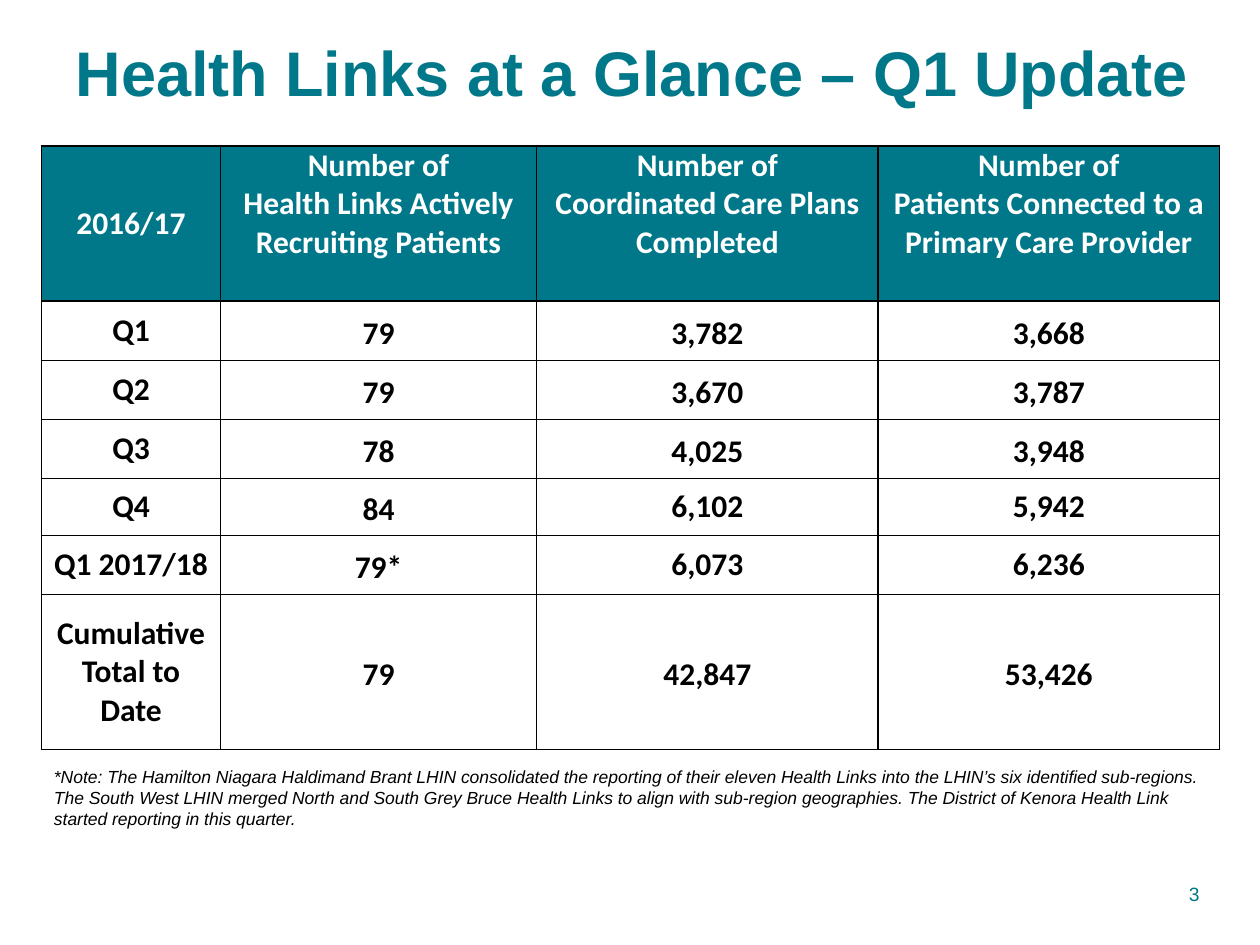
from lxml import etree
from pptx import Presentation
from pptx import util as u
from pptx.dml.color import RGBColor
from pptx.enum import text
from pptx.oxml.ns import qn

Inches, Pt = u.Inches, u.Pt
TEAL = RGBColor(0x00, 0x78, 0x8A)
WHITE = RGBColor(0xFF, 0xFF, 0xFF)
BLACK = RGBColor(0x00, 0x00, 0x00)


def set_font(p, name, size, color, bold=False, italic=False):
    f = p.font
    f.name, f.size, f.bold, f.italic = name, Pt(size), bold, italic
    f.color.rgb = color


def add_borders(cell):
    tcPr = cell._tc.get_or_add_tcPr()
    for i, side in enumerate(("lnL", "lnR", "lnT", "lnB")):
        ln = etree.Element(qn(f"a:{side}"), w=str(Pt(1)))
        fill = etree.SubElement(ln, qn("a:solidFill"))
        etree.SubElement(fill, qn("a:srgbClr"), val=str(BLACK))
        tcPr.insert(i, ln)


prs = Presentation()
prs.slide_width, prs.slide_height = Inches(10), Inches(7.5)
s = prs.slides.add_slide(prs.slide_layouts[5])

title = s.shapes.title
title.left, title.top = Inches(0.5), Inches(0.32)
title.width, title.height = Inches(9.17), Inches(0.57)
tf = title.text_frame
tf.text = "Health Links at a Glance – Q1 Update"
tf.auto_size = text.MSO_AUTO_SIZE.NONE
tf.vertical_anchor = text.MSO_ANCHOR.MIDDLE
p = tf.paragraphs[0]
p.alignment = text.PP_ALIGN.LEFT
p.line_spacing = Pt(37.2)
set_font(p, "Arial", 36, TEAL, bold=True)

rows = [
    ("2016/17",
     "Number of\nHealth Links Actively Recruiting Patients",
     "Number of\nCoordinated Care Plans Completed",
     "Number of\nPatients Connected to a\nPrimary Care Provider"),
    ("Q1", "79", "3,782", "3,668"),
    ("Q2", "79", "3,670", "3,787"),
    ("Q3", "78", "4,025", "3,948"),
    ("Q4", "84", "6,102", "5,942"),
    ("Q1 2017/18", "79*", "6,073", "6,236"),
    ("Cumulative Total to Date", "79", "42,847", "53,426"),
]
col_widths = (1.42, 2.51, 2.71, 2.71)
row_heights = (1.23, 0.47, 0.47, 0.47, 0.45, 0.47, 1.23)
single_spaced_rows = ("Q4", "Q1 2017/18")

table = s.shapes.add_table(len(rows), len(col_widths), Inches(0.33), Inches(1.16),
                           Inches(9.35), Inches(4.8)).table
table.horz_banding = False
for col, width in zip(table.columns, col_widths):
    col.width = Inches(width)
for row, height in zip(table.rows, row_heights):
    row.height = Inches(height)

for r, values in enumerate(rows):
    for c, value in enumerate(values):
        header = r == 0
        cell = table.cell(r, c)
        cell.text = value
        cell.margin_left = cell.margin_right = Inches(0.07)
        cell.margin_top = cell.margin_bottom = 0
        top = header and c > 0
        cell.vertical_anchor = text.MSO_ANCHOR.TOP if top else text.MSO_ANCHOR.MIDDLE
        if header:
            cell.fill.solid()
            cell.fill.fore_color.rgb = TEAL
        else:
            cell.fill.background()
        add_borders(cell)
        loose = not header and (c == 1 or c > 1 and values[0] not in single_spaced_rows)
        for p in cell.text_frame.paragraphs:
            p.alignment = text.PP_ALIGN.CENTER
            set_font(p, "Calibri", 18, WHITE if header else BLACK, bold=True)
            if loose:
                p.line_spacing = 1.15

note = ("*Note: The Hamilton Niagara Haldimand Brant LHIN consolidated the reporting of their "
        "eleven Health Links into the LHIN’s six identified sub-regions. The South West LHIN "
        "merged North and South Grey Bruce Health Links to align with sub-region geographies. "
        "The District of Kenora Health Link started reporting in this quarter.")
text_boxes = [
    (note, (0.33, 6.03, 9.35, 0.61), 10, BLACK, True, text.PP_ALIGN.LEFT),
    ("3", (8.45, 6.95, 1.17, 0.29), 11, TEAL, False, text.PP_ALIGN.RIGHT),
]
for words, box, size, color, italic, align in text_boxes:
    tf = s.shapes.add_textbox(*map(Inches, box)).text_frame
    tf.word_wrap = True
    tf.auto_size = text.MSO_AUTO_SIZE.SHAPE_TO_FIT_TEXT
    tf.text = words
    p = tf.paragraphs[0]
    p.alignment = align
    set_font(p, "Arial", size, color, italic=italic)

prs.save("out.pptx")
